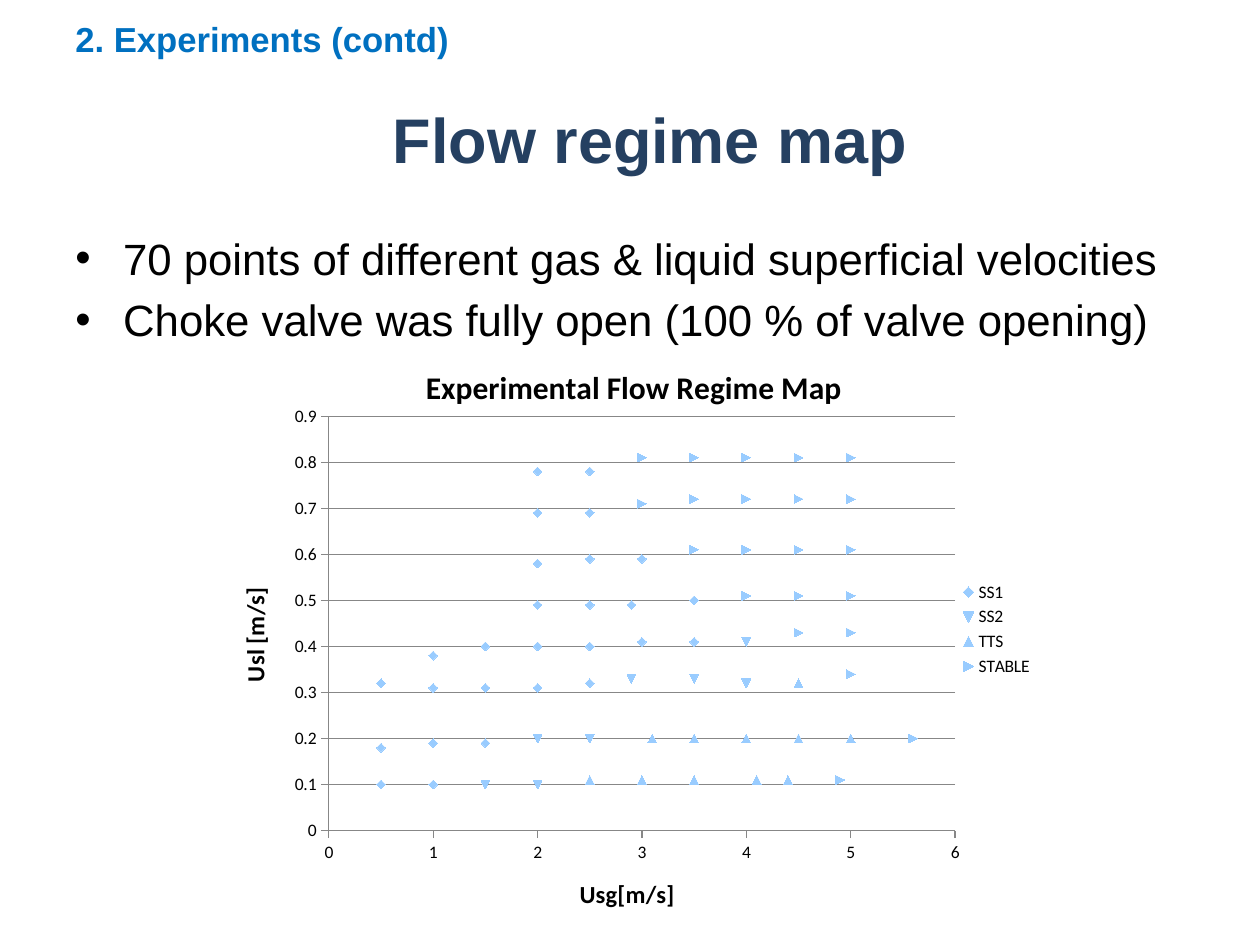
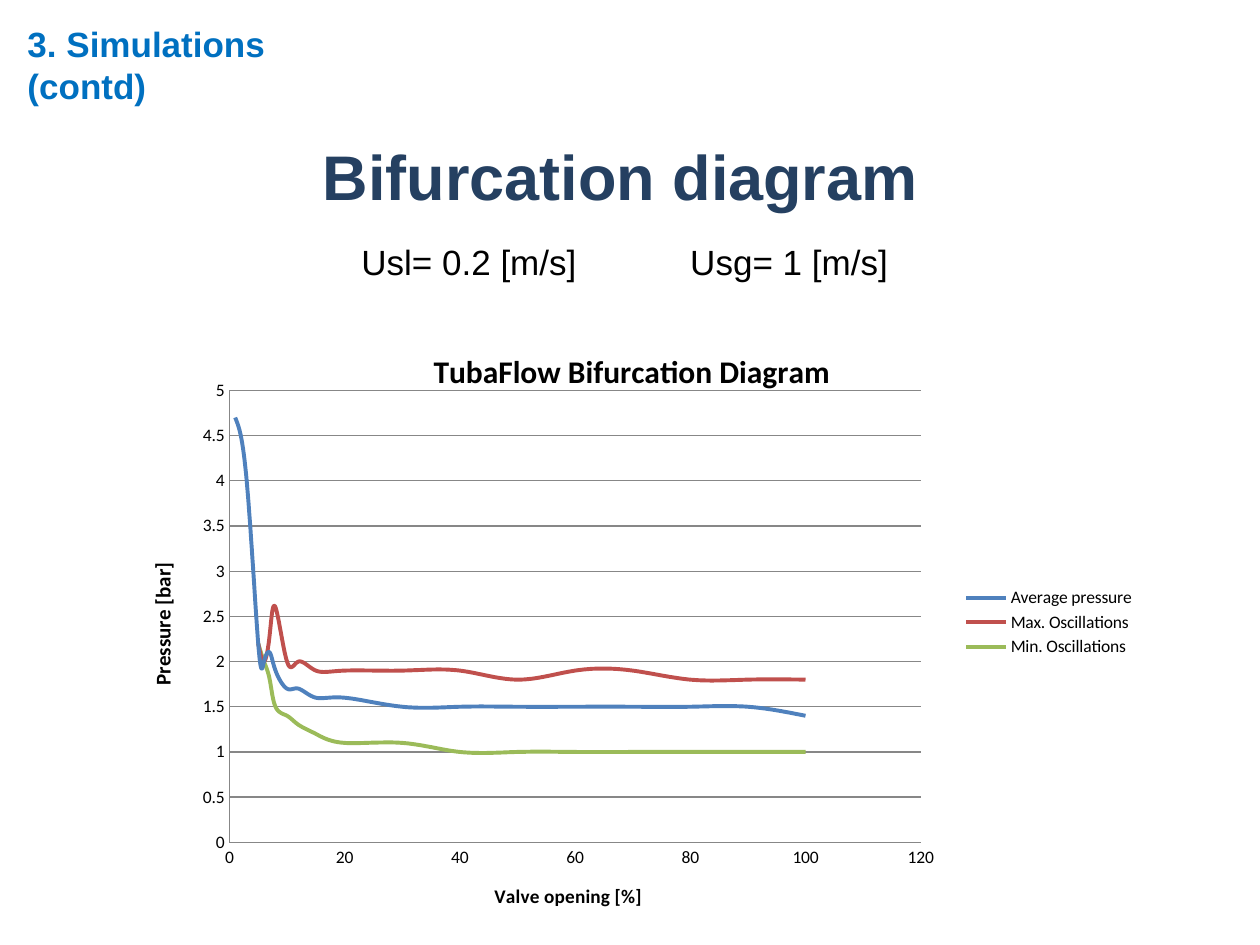
from dataclasses import dataclass

from lxml import etree
from pptx import Presentation
from pptx import util as u
from pptx.chart.data import XyChartData
from pptx.dml.color import RGBColor
from pptx.enum import chart as charts, text
from pptx.oxml import ns

Inches = u.Inches


@dataclass(frozen=True)
class Theme:
    font: str = "Arial"
    chart_font: str = "Calibri"
    section_color: str = "0070C0"
    title_color: str = "254061"
    ink: str = "000000"
    grid: str = "878787"
    marker: str = "99CCFF"
    lines: tuple = ("4F81BD", "C0504D", "9BBB59")
    title_size: float = 36
    bullet_size: float = 25
    label_size: float = 20
    small_section_size: float = 19.8
    chart_title_size: float = 18
    chart_size: float = 10


@dataclass(frozen=True)
class Axis:
    title: str
    size: float
    maximum: float
    step: float


class SlideBuilder:
    def __init__(self, theme):
        self.theme = theme
        self.deck = Presentation()
        self.deck.slide_width, self.deck.slide_height = Inches(10), Inches(7.5)
        self.slide = None

    def add_slide(self):
        self.slide = self.deck.slides.add_slide(self.deck.slide_layouts[5])

    def format_font(self, font, size, color, bold=False, name=None):
        font.name = name or self.theme.font
        font.size = u.Pt(size)
        font.bold = bold
        font.color.rgb = RGBColor.from_string(color)

    def title(self, words, left, top, width, height):
        box = self.slide.shapes.title
        box.left, box.top = Inches(left), Inches(top)
        box.width, box.height = Inches(width), Inches(height)
        box.text_frame.text = words
        box.text_frame.vertical_anchor = text.MSO_ANCHOR.MIDDLE
        para = box.text_frame.paragraphs[0]
        para.alignment = text.PP_ALIGN.CENTER
        self.format_font(para.runs[0].font, self.theme.title_size,
                         self.theme.title_color, True)

    def text_box(self, words, left, top, width, height, size, color, bold=False):
        box = self.slide.shapes.add_textbox(
            Inches(left), Inches(top), Inches(width), Inches(height))
        frame = box.text_frame
        frame.word_wrap = True
        frame.text = words
        for para in frame.paragraphs:
            self.format_font(para.runs[0].font, size, color, bold)
        return frame

    def section(self, words, left, top, width, height, size):
        self.text_box(words, left, top, width, height, size,
                      self.theme.section_color, True)

    def label(self, words, left, top, width):
        self.text_box(words, left, top, width, 0.44, self.theme.label_size,
                      self.theme.ink)

    def bullets(self, items, left, top, width, height):
        frame = self.text_box("\n".join(items), left, top, width, height,
                              self.theme.bullet_size, self.theme.ink)
        for para in frame.paragraphs:
            para.space_after = u.Pt(5)
            properties = para._p.get_or_add_pPr()
            properties.set("marL", str(Inches(0.38)))
            properties.set("indent", str(-Inches(0.38)))
            for tag, key, value in (("a:buFont", "typeface", self.theme.font),
                                    ("a:buChar", "char", "•")):
                etree.SubElement(properties, ns.qn(tag)).set(key, value)

    def scatter(self, kind, title, series, place, plot_area, axes, ticks):
        """Add an XY chart; series maps each name to its x and y values."""
        data = XyChartData()
        for name, (x_values, y_values) in series.items():
            points = data.add_series(name)
            for x, y in zip(x_values, y_values):
                points.add_data_point(x, y)
        frame = self.slide.shapes.add_chart(kind, *map(Inches, place), data)
        chart = frame.chart
        theme = self.theme
        self.drop_missing_points(chart)
        self.format_font(chart.font, theme.chart_size, theme.ink,
                         name=theme.chart_font)
        chart.has_title = True
        self.chart_text(chart.chart_title, title, theme.chart_title_size)
        chart.has_legend = True
        chart.legend.position = charts.XL_LEGEND_POSITION.RIGHT
        chart.legend.include_in_layout = False
        chart.plots[0].vary_by_categories = False
        for axis, style in zip((chart.category_axis, chart.value_axis), axes):
            self.format_axis(axis, style, ticks)
        chart.category_axis.has_major_gridlines = False
        chart.value_axis.has_major_gridlines = True
        self.thin_line(chart.value_axis.major_gridlines.format.line)
        self.place_plot(chart, plot_area)
        return chart

    def drop_missing_points(self, chart):
        """Remove the cached points that hold None, so they stay blank."""
        for point in list(chart._chartSpace.iter(ns.qn("c:pt"))):
            if point.findtext(ns.qn("c:v")) in ("None", ""):
                point.getparent().remove(point)

    def chart_text(self, holder, words, size):
        holder.text_frame.text = words
        self.format_font(holder.text_frame.paragraphs[0].runs[0].font, size,
                         self.theme.ink, True, self.theme.chart_font)

    def thin_line(self, line):
        line.color.rgb = RGBColor.from_string(self.theme.grid)
        line.width = u.Pt(0.75)

    def format_axis(self, axis, style, ticks):
        axis.minimum_scale, axis.maximum_scale = 0, style.maximum
        axis.major_unit = style.step
        axis.major_tick_mark = ticks
        axis.minor_tick_mark = charts.XL_TICK_MARK.NONE
        axis.has_title = True
        self.chart_text(axis.axis_title, style.title, style.size)
        self.thin_line(axis.format.line)

    def place_plot(self, chart, plot_area):
        """Fix the inner plot area as fractions of the chart."""
        area = chart._chartSpace.chart.plotArea
        for old in area.findall(ns.qn("c:layout")):
            area.remove(old)
        layout = etree.Element(ns.qn("c:layout"))
        manual = etree.SubElement(layout, ns.qn("c:manualLayout"))
        settings = [("layoutTarget", "inner"), ("xMode", "edge"), ("yMode", "edge")]
        settings += zip("xywh", plot_area)
        for tag, value in settings:
            etree.SubElement(manual, ns.qn("c:" + tag)).set("val", str(value))
        area.insert(0, layout)


FLOW_REGIMES = {
    "SS1": (
        [0.5, 1, 0.5, 1, 1.5, 0.5, 1, 1.5, 2, 2.5, 1, 1.5, 2, 2.5, 3, 3.5,
         2, 2.5, 2.9, 3.5, 2, 2.5, 3, 2, 2.5, 2, 2.5],
        [0.1, 0.1, 0.18, 0.19, 0.19, 0.32, 0.31, 0.31, 0.31, 0.32, 0.38, 0.4,
         0.4, 0.4, 0.41, 0.41, 0.49, 0.49, 0.49, 0.5, 0.58, 0.59, 0.59,
         0.69, 0.69, 0.78, 0.78]),
    "SS2": (
        [1.5, 2, 2, 2.5, 2.9, 3.5, 4, 4],
        [0.1, 0.1, 0.2, 0.2, 0.33, 0.33, 0.32, 0.41]),
    "TTS": (
        [2.5, 3, 3.5, 4.1, 4.4, 3.1, 3.5, 4, 4.5, 5, 4.5],
        [0.11, 0.11, 0.11, 0.11, 0.11, 0.2, 0.2, 0.2, 0.2, 0.2, 0.32]),
    "STABLE": (
        [4.9, 5.6, 5, 4.5, 5, 4, 4.5, 5, 3.5, 4, 4.5, 5,
         3, 3.5, 4, 4.5, 5, 3, 3.5, 4, 4.5, 5],
        [0.11, 0.2, 0.34, 0.43, 0.43, 0.51, 0.51, 0.51, 0.61, 0.61, 0.61, 0.61,
         0.71, 0.72, 0.72, 0.72, 0.72, 0.81, 0.81, 0.81, 0.81, 0.81]),
}

VALVE_OPENINGS = [1, 3, 5, 6, 7, 8, 10, 12, 15, 20, 30, 40, 50, 60, 70, 80, 90, 100]
PRESSURES = {
    "Average pressure": (
        VALVE_OPENINGS,
        [4.7, 4, 2.2, 2, 2.1, 1.9, 1.7, 1.7, 1.6, 1.6,
         1.5, 1.5, 1.5, 1.5, 1.5, 1.5, 1.5, 1.4]),
    "Max. Oscillations": (
        VALVE_OPENINGS,
        [None, None, 2.2, 2, 2.3, 2.6, 2, 2, 1.9, 1.9,
         1.9, 1.9, 1.8, 1.9, 1.9, 1.8, 1.8, 1.8]),
    "Min. Oscillations": (
        VALVE_OPENINGS,
        [None, None, 2.2, 2, 1.8, 1.5, 1.4, 1.3, 1.2, 1.1,
         1.1, 1, 1, 1, 1, 1, 1, 1]),
}


def flow_regime_slide(builder):
    builder.add_slide()
    builder.section("2. Experiments (contd)", 0.5, 0.09, 5, 0.44,
                    builder.theme.small_section_size)
    builder.title("Flow regime map", 0.66, 0.7, 9, 0.8)
    builder.bullets(
        ["70 points of different gas & liquid superficial velocities",
         "Choke valve was fully open (100 % of valve opening)"],
        0.5, 1.79, 9, 1)
    chart = builder.scatter(
        charts.XL_CHART_TYPE.XY_SCATTER, "Experimental Flow Regime Map",
        FLOW_REGIMES, (1.76, 2.71, 6.54, 4.57), (0.13, 0.13, 0.76, 0.72),
        (Axis("Usg[m/s]", 14, 6, 1), Axis("Usl [m/s]", 14, 0.9, 0.1)),
        charts.XL_TICK_MARK.OUTSIDE)
    for series in chart.plots[0].series:
        marker = series.marker
        marker.size = 5
        marker.format.fill.solid()
        marker.format.fill.fore_color.rgb = RGBColor.from_string(builder.theme.marker)
        marker.format.line.fill.background()


def bifurcation_slide(builder):
    builder.add_slide()
    builder.section("3. Simulations (contd)", 0.12, 0.13, 2.9, 0.77,
                    builder.theme.label_size)
    builder.title("Bifurcation diagram", 0.35, 0.99, 9.15, 0.8)
    builder.label("Usl= 0.2 [m/s]", 2.77, 1.86, 2.4)
    builder.label("Usg= 1 [m/s]", 5.38, 1.86, 2.4)
    chart = builder.scatter(
        charts.XL_CHART_TYPE.XY_SCATTER_SMOOTH_NO_MARKERS,
        "TubaFlow Bifurcation Diagram",
        PRESSURES, (0.92, 2.58, 8.19, 4.72), (0.11, 0.11, 0.67, 0.76),
        (Axis("Valve opening [%]", 11, 120, 20), Axis("Pressure [bar]", 12, 5, 0.5)),
        charts.XL_TICK_MARK.NONE)
    for series, color in zip(chart.plots[0].series, builder.theme.lines):
        series.format.line.color.rgb = RGBColor.from_string(color)
        series.format.line.width = u.Pt(2.25)
        series._element.get_or_add_smooth().val = True


def main():
    builder = SlideBuilder(Theme())
    flow_regime_slide(builder)
    bifurcation_slide(builder)
    builder.deck.save("out.pptx")


if __name__ == "__main__":
    main()
